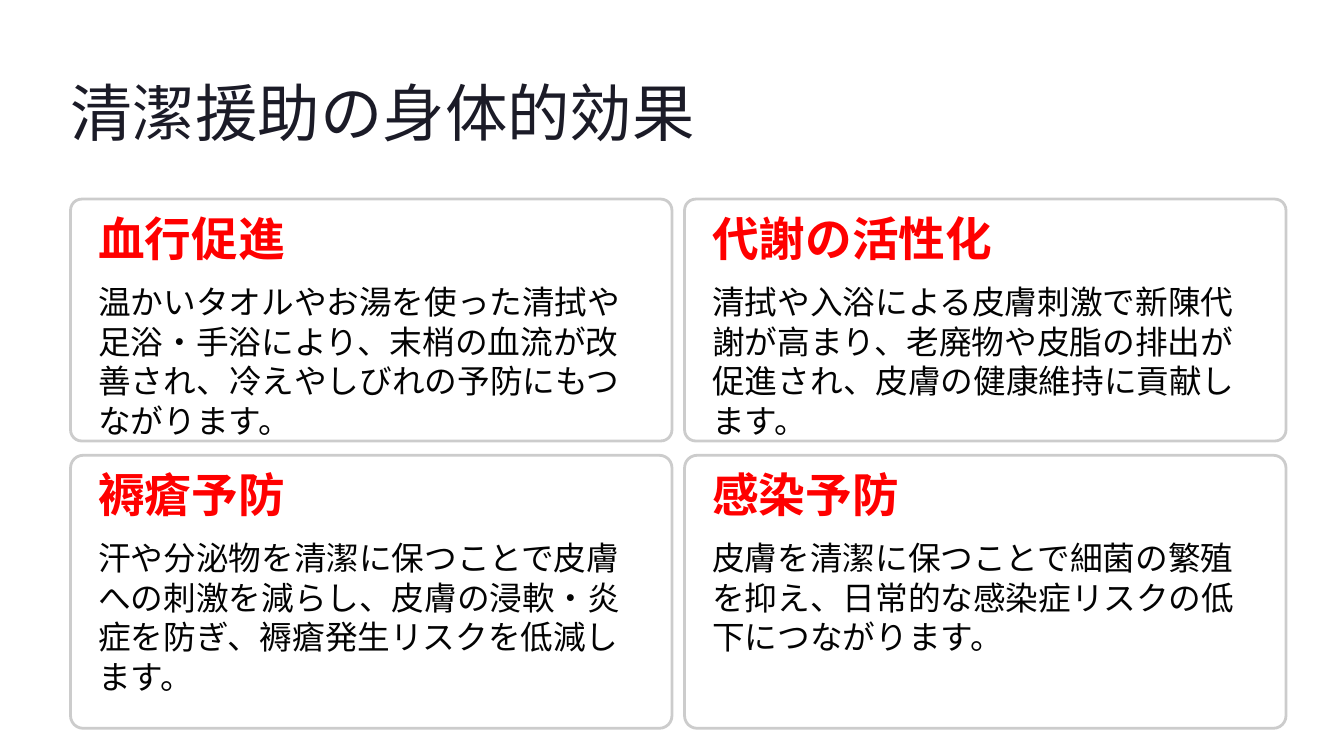
from pptx import Presentation
from pptx.dml.color import RGBColor
from pptx.enum.shapes import MSO_SHAPE as Shape
from pptx.oxml.ns import qn
from pptx.util import Inches, Pt
from lxml.etree import SubElement


def color(hex_string):
    return RGBColor.from_string(hex_string)


class SlideBuilder:
    HEADING_FONT, BODY_FONT = "Inter", "Cabin"
    TITLE, HEADING, BODY = "1B1B27", "FF0000", "030303"
    PANEL, BORDER = "FFFFFF", "CCCCCC"

    def __init__(self, prs):
        self.slide = prs.slides.add_slide(prs.slide_layouts[6])

    def text(self, box, text, size, font, ink, leading, bold=False, wrap=False):
        sp = self.slide.shapes.add_textbox(*map(Inches, box))
        tf = sp.text_frame
        tf.margin_left = tf.margin_top = tf.margin_right = tf.margin_bottom = 0
        tf.word_wrap = wrap
        p = tf.paragraphs[0]
        p.text = text
        p.line_spacing = Pt(leading)
        p.font.size, p.font.name, p.font.bold = Pt(size), font, bold
        p.font.color.rgb = color(ink)

    def title(self, box, text):
        self.text(box, text, 53.5, self.HEADING_FONT, self.TITLE, 67)

    def panel(self, box):
        sp = self.slide.shapes.add_shape(Shape.ROUNDED_RECTANGLE, *map(Inches, box))
        sp.adjustments[0] = 0.046
        sp.shadow.inherit = False
        sp.fill.solid()
        sp.fill.fore_color.rgb = color(self.PANEL)
        # Slight transparency
        fill = sp.fill._xPr.find(qn("a:solidFill"))
        SubElement(fill[0], qn("a:alpha"), val="95000")
        sp.line.color.rgb = color(self.BORDER)
        sp.line.width = Pt(2.4)

    def card(self, box, heading, body, body_height):
        left, top = box[0] + 0.33, box[1] + 0.33
        self.panel(box)
        self.text((left, top, 3.74, 0.47), heading, 40,
                  self.HEADING_FONT, self.HEADING, 33.5, bold=True)
        self.text((left, top + 0.65, 6.35, body_height), body, 28,
                  self.BODY_FONT, self.BODY, 34, wrap=True)


# Card rows: top, height, then (heading, body, body height) from left to right
ROWS = [
    (2.37, 2.88, [
        ("血行促進", "温かいタオルやお湯を使った清拭や足浴・手浴により、末梢の血流が改善され、"
         "冷えやしびれの予防にもつながります。", 1.44),
        ("代謝の活性化", "清拭や入浴による皮膚刺激で新陳代謝が高まり、老廃物や皮脂の排出が促進され、"
         "皮膚の健康維持に貢献します。", 1.44),
    ]),
    (5.42, 3.25, [
        ("褥瘡予防", "汗や分泌物を清潔に保つことで皮膚への刺激を減らし、皮膚の浸軟・炎症を防ぎ、"
         "褥瘡発生リスクを低減します。", 1.44),
        ("感染予防", "皮膚を清潔に保つことで細菌の繁殖を抑え、"
         "日常的な感染症リスクの低下につながります。", 0.96),
    ]),
]
LEFT, CARD_WIDTH, GAP = 0.84, 7.16, 0.15


def main():
    prs = Presentation()
    prs.slide_width, prs.slide_height = Inches(16), Inches(9)
    s = SlideBuilder(prs)

    # Title
    s.title((LEFT, 0.84, 7.48, 0.93), "清潔援助の身体的効果")

    # Card grid
    for top, height, cards in ROWS:
        for col, (heading, body, body_height) in enumerate(cards):
            left = LEFT + col * (CARD_WIDTH + GAP)
            s.card((left, top, CARD_WIDTH, height), heading, body, body_height)

    prs.save("out.pptx")


if __name__ == "__main__":
    main()
